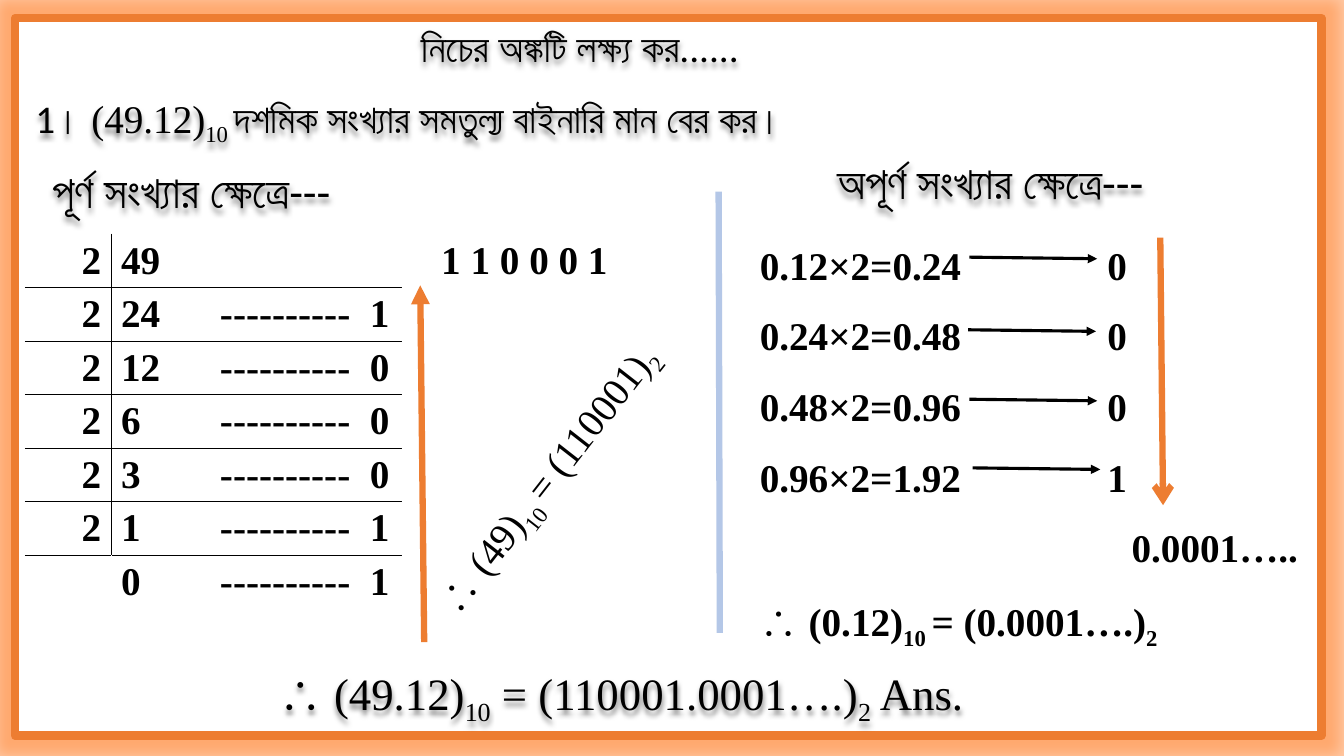
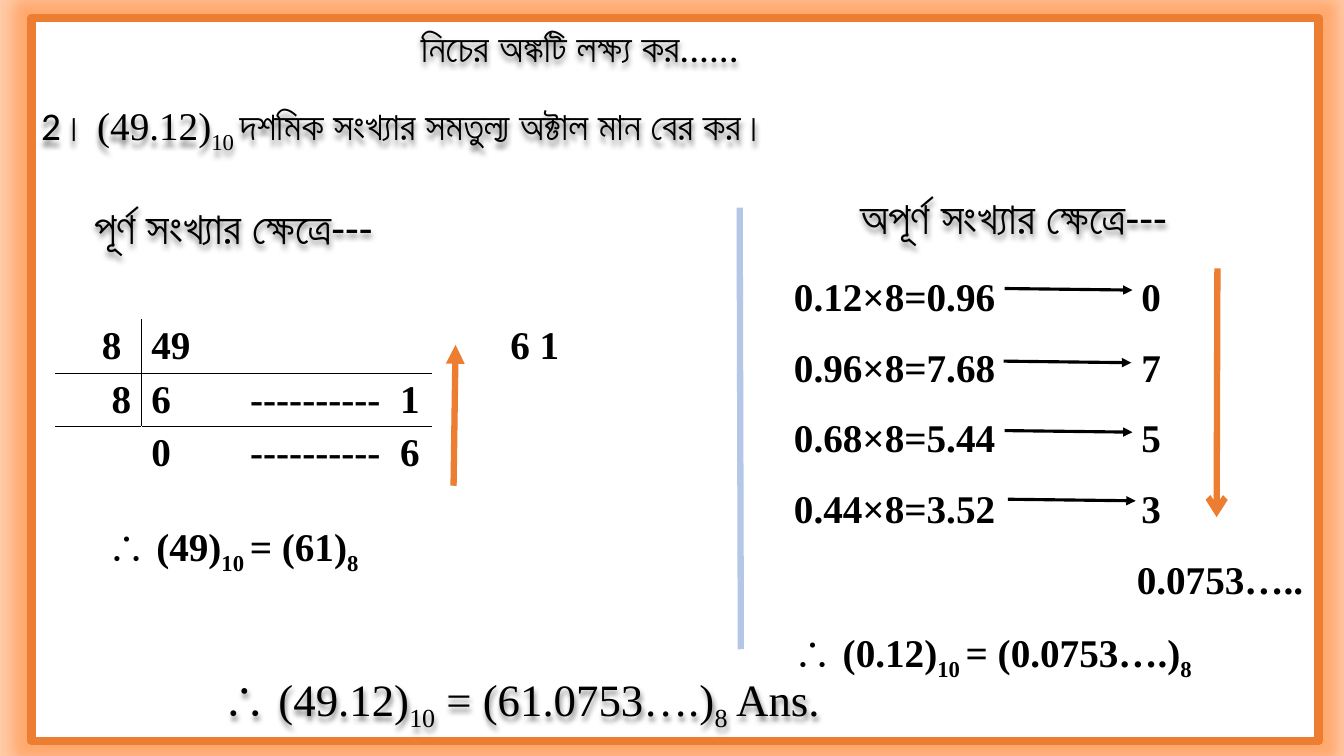
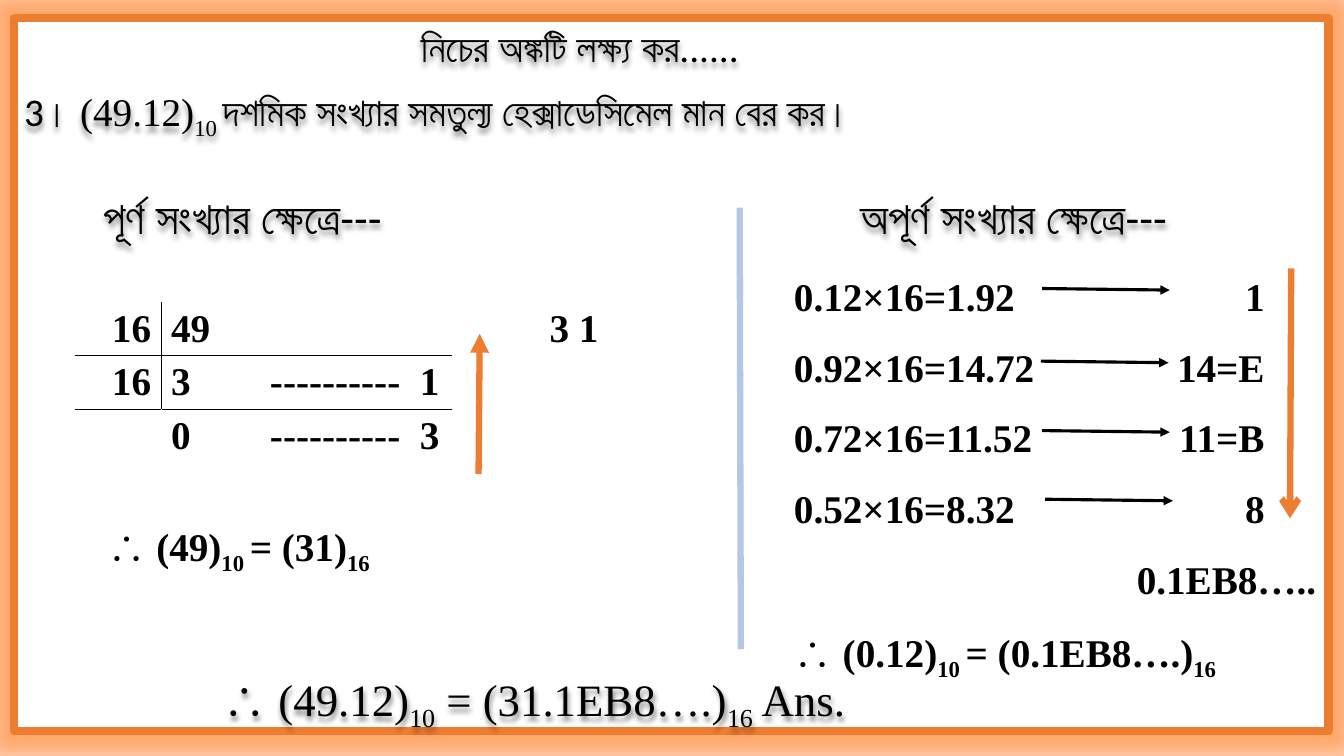
import pptx
import pptx.util
import pptx.dml.color
import pptx.enum.shapes
import pptx.enum.text
import pptx.oxml
import pptx.oxml.ns
from lxml import etree

Cm = pptx.util.Cm
Pt = pptx.util.Pt
qn = pptx.oxml.ns.qn
colour = pptx.dml.color.RGBColor.from_string
NAMESPACE = pptx.oxml.ns.nsdecls("a")

# Shared look
ORANGE, BLUE, BLACK, WHITE = "ED7D31", "B4C7E7", "000000", "FFFFFF"
RUN_STYLES = {  # font, bold, baseline
    "bangla": ("Calibri", False, 0),
    "plain": ("Times New Roman", False, 0),
    "sub": ("Times New Roman", False, -25000),
    "bold": ("Times New Roman", True, 0),
    "boldsub": ("Times New Roman", True, -25000),
}
GLOW = (f'<a:effectLst {NAMESPACE}><a:glow rad="228600"><a:srgbClr val="{ORANGE}">'
        '<a:satMod val="175000"/><a:alpha val="40000"/></a:srgbClr></a:glow></a:effectLst>')
TEXT_SHADOW = (f'<a:effectLst {NAMESPACE}><a:outerShdw blurRad="50800" dist="38100" dir="5400000">'
               f'<a:srgbClr val="{BLACK}"><a:alpha val="50000"/></a:srgbClr>'
               '</a:outerShdw></a:effectLst>')
TITLE = "নিচের অঙ্কটি লক্ষ্য কর......"
INTEGER_HEADING = "পূর্ণ সংখ্যার ক্ষেত্রে---"
FRACTION_HEADING = "অপূর্ণ সংখ্যার ক্ষেত্রে---"
COLUMN_WIDTHS = (2.16, 2.49, 4.85, 7.85)
ROW_HEIGHT = 1.3
REMAINDER_TAB = 3.78
STEP_ARROWS = ((0, 1.12), (-0.03, 2.95), (0, 4.7), (0.08, 6.43))
STEP_ARROW_LENGTH, STEP_ARROW_DROP = 3.22, 0.04

# What differs from slide to slide (lengths in cm)
EXERCISES = [
    dict(number="1", base=2, system="বাইনারি", first_divisor="2",
         integer="110001", digits="1 1 0 0 0 1", fraction="0001",
         workings=[("0.12×2=0.24", "0"), ("0.24×2=0.48", "0"),
                   ("0.48×2=0.96", "0"), ("0.96×2=1.92", "1")],
         frame=(0.38, 0.46, 32.92, 18.08), question=(0.64, 2.24, 20.22, 1.45),
         table=(0.64, 4.6), top_row=1.3, digits_margin=0.98,
         integer_heading=(1.07, 4.01), fraction_heading=(20.85, 3.78),
         workings_at=(18.9, 5.36), digit_tab=9.25, fraction_tab=9.37, step_x=24.43,
         up=(10.69, 16.18, 10.59, 7.19), down=(29.24, 5.99, 29.31, 12.73),
         divider=(18.11, 4.83, 18.14, 15.95),
         result=(9.37, 11.33, 8.79, 1.45), turn=307.9, answer=(6.76, 16.64)),
    dict(number="2", base=8, system="অক্টাল", first_divisor="8 ",
         integer="61", digits="6 1", fraction="0753",
         workings=[("0.12×8=0.96", "0"), ("0.96×8=7.68", "7"),
                   ("0.68×8=5.44", "5"), ("0.44×8=3.52", "3")],
         frame=(0.79, 0.46, 32.44, 18.21), question=(0.79, 2.44, 20.22, 1.45),
         table=(1.4, 6.76), top_row=1.3, digits_margin=1.96,
         integer_heading=(2.13, 4.9), fraction_heading=(21.44, 4.65),
         workings_at=(19.76, 6.15), digit_tab=9.25, fraction_tab=8.64, step_x=25.32,
         up=(11.43, 12.24, 11.48, 8.69), down=(30.68, 6.76, 30.66, 13.03),
         divider=(18.64, 5.23, 18.67, 16.36),
         result=(2.46, 13.03, 11.86, 2.24), turn=0, answer=(5.36, 16.79)),
    dict(number="3", base=16, system="হেক্সাডেসিমেল", first_divisor="16",
         integer="31", digits="3 1", fraction="1EB8",
         workings=[("0.12×16=1.92", "1"), ("0.92×16=14.72", "14=E"),
                   ("0.72×16=11.52", "11=B"), ("0.52×16=8.32", "8")],
         frame=(0.36, 0.46, 33.12, 17.96), question=(0.36, 2.08, 22.43, 1.45),
         table=(1.9, 5.97), top_row=1.65, digits_margin=2.45,
         integer_heading=(2.36, 4.65), fraction_heading=(21.44, 4.65),
         workings_at=(19.76, 6.15), digit_tab=11.86, fraction_tab=8.64, step_x=26.26,
         up=(12.06, 11.94, 12.09, 8.41), down=(32.54, 6.76, 32.51, 13.06),
         divider=(18.64, 5.23, 18.67, 16.36),
         result=(2.46, 13.03, 11.86, 2.24), turn=0, answer=(5.36, 16.79)),
]


def write_para(para, size, runs, tab=None, tab_side="l"):
    """Add styled runs to a paragraph, with an optional tab stop in cm."""
    for text, style in runs:
        font, bold, baseline = RUN_STYLES[style]
        span = para.add_run()
        span.text = text
        span.font.name, span.font.size, span.font.bold = font, Pt(size), bold
        span.font.color.rgb = colour(BLACK)
        if baseline:
            span.font._element.set("baseline", str(baseline))
    if tab:
        stops = etree.SubElement(para._p.get_or_add_pPr(), qn("a:tabLst"))
        etree.SubElement(stops, qn("a:tab"), pos=str(Cm(tab)), algn=tab_side)


def add_box(slide, place, shadow=False):
    """Add an empty wrapping text box and return it."""
    box = slide.shapes.add_textbox(*map(Cm, place))
    box.text_frame.word_wrap = True
    if shadow:
        box._element.spPr.append(pptx.oxml.parse_xml(TEXT_SHADOW))
    return box


deck = pptx.Presentation()
deck.slide_width, deck.slide_height = Cm(33.87), Cm(19.05)

for item in EXERCISES:
    slide = deck.slides.add_slide(deck.slide_layouts[6])
    base = str(item["base"])

    # Glowing frame
    frame = slide.shapes.add_shape(pptx.enum.shapes.MSO_SHAPE.RECTANGLE, *map(Cm, item["frame"]))
    frame.fill.solid()
    frame.fill.fore_color.rgb = colour(WHITE)
    frame.line.color.rgb = colour(ORANGE)
    frame.line.width = Pt(6)
    frame._element.spPr.append(pptx.oxml.parse_xml(GLOW))

    # Repeated division: divisor, quotient, remainder
    rows = [("", "", "", ""), (item["first_divisor"], "49", "", item["digits"])]
    value = 49
    while value:
        value, remainder = divmod(value, item["base"])
        rows.append((base if value else "", str(value), f"----------\t{remainder}", ""))
    left, top = item["table"]
    table = slide.shapes.add_table(
        len(rows), 4, Cm(left), Cm(top), Cm(sum(COLUMN_WIDTHS)),
        Cm(item["top_row"] + ROW_HEIGHT * (len(rows) - 1))).table
    table.first_row = table.horz_banding = False
    for column, width in zip(table.columns, COLUMN_WIDTHS):
        column.width = Cm(width)
    last = len(rows) - 1
    for r, texts in enumerate(rows):
        table.rows[r].height = Cm(ROW_HEIGHT if r else item["top_row"])
        for c, text in enumerate(texts):
            cell = table.cell(r, c)
            edges = {
                "a:lnL": c == 1 and 0 < r < last,
                "a:lnR": c == 0 and 0 < r < last,
                "a:lnT": c < 3 and r > 1,
                "a:lnB": c < 3 and 0 < r < last,
            }
            for edge, drawn in edges.items():
                if drawn:
                    border = etree.SubElement(cell._tc.get_or_add_tcPr(), qn(edge), w=str(Pt(1)))
                    paint = etree.SubElement(border, qn("a:solidFill"))
                    etree.SubElement(paint, qn("a:srgbClr"), val=BLACK)
            cell.fill.solid()
            cell.fill.fore_color.rgb = colour(WHITE)
            if not text:
                continue
            para = cell.text_frame.paragraphs[0]
            if c == 0:
                para.alignment = pptx.enum.text.PP_ALIGN.RIGHT
            if c == 3:
                cell.margin_left = Cm(item["digits_margin"])
            write_para(para, 28, [(text, "bold")], REMAINDER_TAB if c == 2 else None)

    # Title, question, headings and final answer
    shadowed = [
        ((10.36, 0.46, 9.96, 1.45), 28, [(TITLE, "bangla")]),
        (item["question"], 28, [
            (item["number"] + "। ", "bangla"), ("(49.12)", "plain"), ("10 ", "sub"),
            (f"দশমিক সংখ্যার সমতুল্য {item['system']} মান বের কর।", "bangla")]),
        ((*item["integer_heading"], 9.3, 1.63), 32, [(INTEGER_HEADING, "bangla")]),
        ((*item["fraction_heading"], 9.3, 1.63), 32, [(FRACTION_HEADING, "bangla")]),
        ((*item["answer"], 18.75, 1.63), 32, [
            ("∴ (49.12)", "plain"), ("10", "sub"),
            (f" = ({item['integer']}.{item['fraction']}….)", "plain"),
            (base, "sub"), (" Ans.", "plain")]),
    ]
    for place, size, runs in shadowed:
        box = add_box(slide, place, shadow=True)
        write_para(box.text_frame.paragraphs[0], size, runs)

    # Result of the integer part
    box = add_box(slide, item["result"])
    box.rotation = item["turn"]
    para = box.text_frame.paragraphs[0]
    weight = "bold"
    if item["turn"]:
        para.alignment = pptx.enum.text.PP_ALIGN.CENTER
        weight = "plain"
    small = "boldsub" if weight == "bold" else "sub"
    write_para(para, 28, [("∴ ", "plain"), ("(49)", weight), ("10 ", small),
                          (f"= ({item['integer']})", weight), (base, small)])

    # Repeated multiplication and its result
    left, top = item["workings_at"]
    box = add_box(slide, (left, top, 14.43, 11.02))
    lines = [([(f"{product}\t{digit}", "bold")], item["digit_tab"], "r")
             for product, digit in item["workings"]]
    lines.append(([(f"\t0.{item['fraction']}…..", "bold")], item["fraction_tab"], "l"))
    lines.append(([("∴ ", "plain"), ("(0.12)", "bold"), ("10 ", "boldsub"),
                   (f"= (0.{item['fraction']}….)", "bold"), (base, "boldsub")], None, "l"))
    for index, (runs, tab, side) in enumerate(lines):
        para = box.text_frame.add_paragraph() if index else box.text_frame.paragraphs[0]
        para.line_spacing = 1.5
        write_para(para, 28, runs, tab, side)

    # Divider, reading-direction arrows and step arrows
    strokes = [(item["divider"], BLUE, 4.5, None),
               (item["up"], ORANGE, 4.5, "triangle"),
               (item["down"], ORANGE, 4.5, "arrow")]
    for shift, drop in STEP_ARROWS:
        x, y = item["step_x"] + shift, top + drop
        strokes.append(((x, y, x + STEP_ARROW_LENGTH, y + STEP_ARROW_DROP),
                        BLACK, 2.25, "triangle"))
    for ends, tint, width, head in strokes:
        stroke = slide.shapes.add_connector(
            pptx.enum.shapes.MSO_CONNECTOR.STRAIGHT, *map(Cm, ends))
        stroke.line.color.rgb = colour(tint)
        stroke.line.width = Pt(width)
        if head:
            etree.SubElement(stroke.line._get_or_add_ln(), qn("a:tailEnd"), type=head)
        etree.SubElement(stroke._element.spPr, qn("a:effectLst"))

deck.save("out.pptx")
